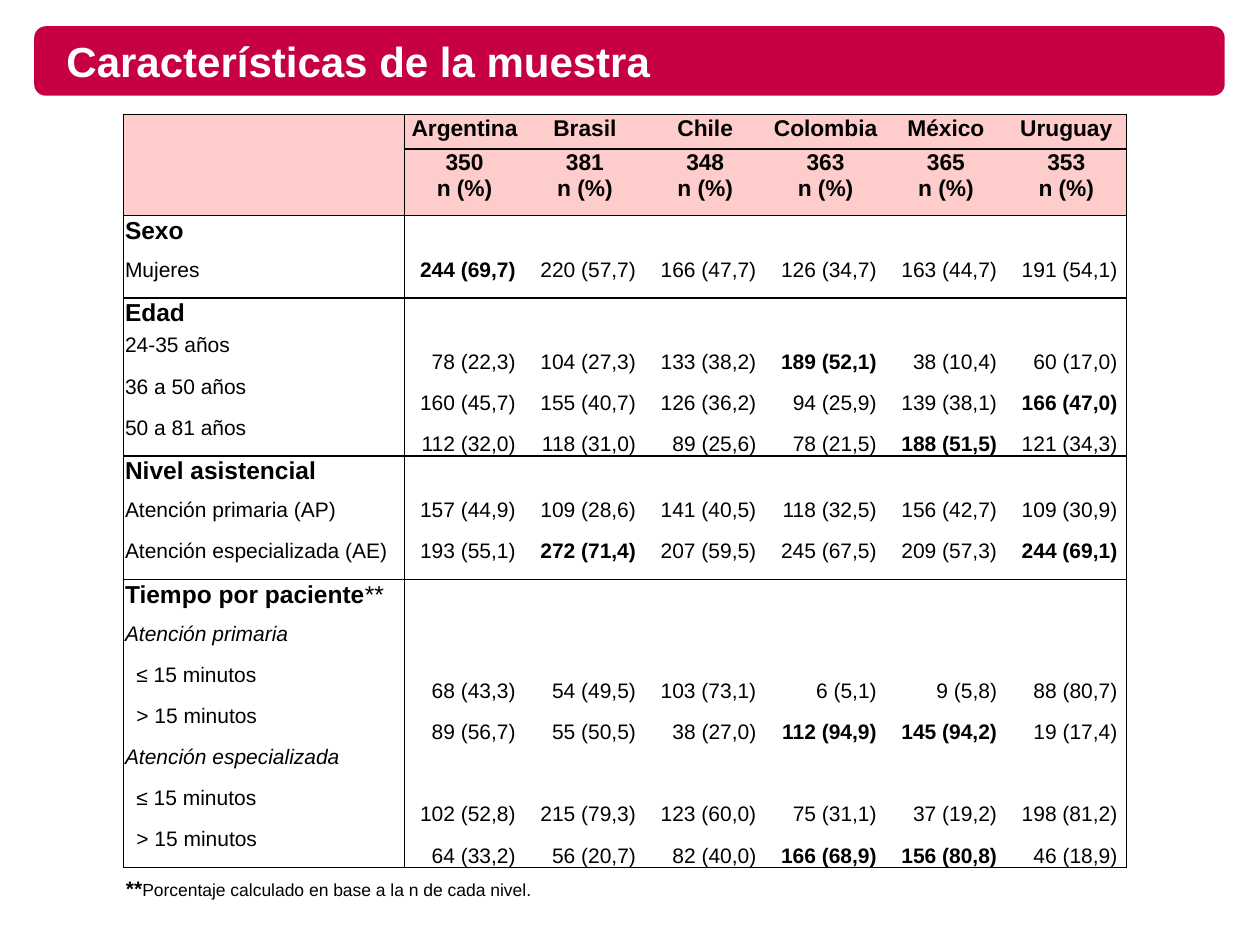
from dataclasses import dataclass

from lxml import etree
from pptx import Presentation
from pptx.dml.color import RGBColor
from pptx.enum.shapes import MSO_SHAPE
from pptx.enum.text import MSO_ANCHOR, PP_ALIGN
from pptx.oxml.ns import qn
from pptx.util import Cm, Pt

ROUNDED = MSO_SHAPE.ROUNDED_RECTANGLE
TOP, MIDDLE, BOTTOM = MSO_ANCHOR.TOP, MSO_ANCHOR.MIDDLE, MSO_ANCHOR.BOTTOM
LEFT, CENTER, RIGHT = PP_ALIGN.LEFT, PP_ALIGN.CENTER, PP_ALIGN.RIGHT


@dataclass(frozen=True)
class Theme:
    font: str = "Arial"
    banner: RGBColor = RGBColor(0xC7, 0x00, 0x44)
    header: RGBColor = RGBColor(0xFF, 0xCC, 0xCC)
    white: RGBColor = RGBColor(0xFF, 0xFF, 0xFF)
    black: RGBColor = RGBColor(0, 0, 0)
    title: int = 24
    section: int = 14
    country: int = 13
    body: int = 12
    note: int = 10
    border: int = 1


THEME = Theme()
COUNTRIES = {"Argentina": 350, "Brasil": 381, "Chile": 348,
             "Colombia": 363, "México": 365, "Uruguay": 353}
INDENTED = ("≤ 15 minutos", "> 15 minutos")

# Section: title, anchor of its values, rows of (label, values, bold countries)
SECTIONS = [
    ("Sexo", TOP, [
        ("Mujeres", "244 (69,7)|220 (57,7)|166 (47,7)|126 (34,7)|163 (44,7)|191 (54,1)",
         ["Argentina"]),
    ]),
    ("Edad", BOTTOM, [
        ("24-35 años", "78 (22,3)|104 (27,3)|133 (38,2)|189 (52,1)|38 (10,4)|60 (17,0)",
         ["Colombia"]),
        ("36 a 50 años", "160 (45,7)|155 (40,7)|126 (36,2)|94 (25,9)|139 (38,1)|166 (47,0)",
         ["Uruguay"]),
        ("50 a 81 años", "112 (32,0)|118 (31,0)|89 (25,6)|78 (21,5)|188 (51,5)|121 (34,3)",
         ["México"]),
    ]),
    ("Nivel asistencial", TOP, [
        ("Atención primaria (AP)",
         "157 (44,9)|109 (28,6)|141 (40,5)|118 (32,5)|156 (42,7)|109 (30,9)", []),
        ("Atención especializada (AE)",
         "193 (55,1)|272 (71,4)|207 (59,5)|245 (67,5)|209 (57,3)|244 (69,1)",
         ["Brasil", "Uruguay"]),
    ]),
    ("Tiempo por paciente", BOTTOM, [
        ("Atención primaria", "", []),
        ("≤ 15 minutos", "68 (43,3)|54 (49,5)|103 (73,1)|6 (5,1)|9 (5,8)|88 (80,7)", []),
        ("> 15 minutos", "89 (56,7)|55 (50,5)|38 (27,0)|112 (94,9)|145 (94,2)|19 (17,4)",
         ["Colombia", "México"]),
        ("Atención especializada", "", []),
        ("≤ 15 minutos", "102 (52,8)|215 (79,3)|123 (60,0)|75 (31,1)|37 (19,2)|198 (81,2)", []),
        ("> 15 minutos", "64 (33,2)|56 (20,7)|82 (40,0)|166 (68,9)|156 (80,8)|46 (18,9)",
         ["Colombia", "México"]),
    ]),
]


def style_run(run, size, color=THEME.black, bold=False, italic=False):
    font = run.font
    font.name, font.size, font.bold, font.italic = THEME.font, Pt(size), bold, italic
    font.color.rgb = color


def add_run(paragraph, text, size, **style):
    run = paragraph.add_run()
    run.text = text
    style_run(run, size, **style)


def set_margins(target, left, top, right, bottom):
    target.margin_left, target.margin_top = Cm(left), Cm(top)
    target.margin_right, target.margin_bottom = Cm(right), Cm(bottom)


def fill_cell(cell, text, size, align, margins, anchor=TOP, spacing=None, **style):
    cell.text_frame.text = text
    cell.vertical_anchor = anchor
    set_margins(cell, *margins)
    for paragraph in cell.text_frame.paragraphs:
        paragraph.alignment = align
        if spacing:
            paragraph.line_spacing = spacing
        for run in paragraph.runs:
            style_run(run, size, **style)


def clear_cell(cell):
    """Keep an empty cell from stretching its row."""
    set_margins(cell, 0, 0, 0, 0)
    end = cell.text_frame.paragraphs[0]._p.get_or_add_endParaRPr()
    end.set("sz", str(THEME.body * 100))


def set_borders(cell, sides):
    """Draw the sides named in a string of L, R, T and B, and blank the others."""
    properties = cell._tc.get_or_add_tcPr()
    for side in "LRTB":
        line = etree.SubElement(properties, qn(f"a:ln{side}"), w=str(Pt(THEME.border)))
        if side in sides:
            solid = etree.SubElement(line, qn("a:solidFill"))
            etree.SubElement(solid, qn("a:srgbClr"), val=str(THEME.black))
        else:
            etree.SubElement(line, qn("a:noFill"))


def add_text_box(slide, left, top, width, height):
    frame = slide.shapes.add_textbox(Cm(left), Cm(top), Cm(width), Cm(height)).text_frame
    frame.word_wrap = True
    return frame


def add_banner(slide, left, top, width, height):
    banner = slide.shapes.add_shape(ROUNDED, Cm(left), Cm(top), Cm(width), Cm(height))
    banner.shadow.inherit = False
    banner.fill.solid()
    banner.fill.fore_color.rgb = THEME.banner
    banner.line.fill.background()

    title = add_text_box(slide, left + 0.4, top + 0.1, width - 1.2, height - 0.2)
    title.vertical_anchor = MIDDLE
    add_run(title.paragraphs[0], "Características de la muestra", THEME.title,
            color=THEME.white, bold=True)


def fill_header(table):
    table.cell(0, 0).merge(table.cell(1, 0))
    clear_cell(table.cell(0, 0))
    for column, (country, sample) in enumerate(COUNTRIES.items(), 1):
        for row, text in enumerate((country, f"{sample}\nn (%)")):
            fill_cell(table.cell(row, column), text, THEME.country, CENTER,
                      (0.03, 0.03, 0.03, 0), bold=True)


def fill_section(table, first_row, title, anchor, rows):
    label_margins = (0.03, 0.03, 0.23, 0)
    heading = table.cell(first_row, 0)
    fill_cell(heading, title, THEME.section, LEFT, label_margins, bold=True)
    if title == "Tiempo por paciente":
        add_run(heading.text_frame.paragraphs[0], "**", THEME.section)
    for column in range(1, len(COUNTRIES) + 1):
        clear_cell(table.cell(first_row, column))

    for row, (label, values, bold_countries) in enumerate(rows, first_row + 1):
        margins = (0.26, *label_margins[1:]) if label in INDENTED else label_margins
        fill_cell(table.cell(row, 0), label, THEME.body, LEFT, margins, italic=not values)
        texts = values.split("|") if values else [""] * len(COUNTRIES)
        for column, (country, text) in enumerate(zip(COUNTRIES, texts), 1):
            cell = table.cell(row, column)
            if text:
                fill_cell(cell, text, THEME.body, RIGHT, (0.18, 0, 0.18, 0), anchor,
                          spacing=1.07, bold=country in bold_countries)
            else:
                clear_cell(cell)


def add_sample_table(slide, left, top, width, label_width):
    heights = [0.69, 1.35]
    for title, _, rows in SECTIONS:
        heights += [0.69 if title == "Edad" else 0.83] + [0.83] * len(rows)
    columns = len(COUNTRIES) + 1
    table = slide.shapes.add_table(len(heights), columns, Cm(left), Cm(top),
                                   Cm(width), Cm(sum(heights))).table
    table.first_row = table.horz_banding = False
    for row, height in zip(table.rows, heights):
        row.height = Cm(height)
    for index, column in enumerate(table.columns):
        column.width = Cm((width - label_width) / (columns - 1) if index else label_width)

    fill_header(table)
    rules = {0, 1, 2}
    first_row = 2
    for title, anchor, rows in SECTIONS:
        fill_section(table, first_row, title, anchor, rows)
        first_row += len(rows) + 1
        rules.add(first_row)

    for r in range(len(heights)):
        for c in range(columns):
            cell = table.cell(r, c)
            inside_merge = c == 0
            top_rule = r in rules and not (inside_merge and r == 1)
            bottom_rule = r + 1 in rules and not (inside_merge and r == 0)
            if cell.is_merge_origin:
                bottom_rule = True
            set_borders(cell, ("L" if c < 2 else "") + ("R" if c in (0, columns - 1) else "")
                        + ("T" if top_rule else "") + ("B" if bottom_rule else ""))
            if r < 2:
                cell.fill.solid()
                cell.fill.fore_color.rgb = THEME.header
            else:
                cell.fill.background()


def add_footnote(slide, left, top, width, height):
    note = add_text_box(slide, left, top, width, height).paragraphs[0]
    add_run(note, "**", THEME.body, bold=True)
    add_run(note, "Porcentaje calculado en base a la n de cada nivel.", THEME.note)


def main():
    deck = Presentation()
    deck.slide_width, deck.slide_height = Cm(25.4), Cm(19.05)
    slide = deck.slides.add_slide(deck.slide_layouts[6])
    add_banner(slide, 0.69, 0.53, 24.0, 1.4)
    add_sample_table(slide, 2.49, 2.31, 20.22, 5.66)
    add_footnote(slide, 2.29, 17.53, 21.23, 0.76)
    deck.save("out.pptx")


if __name__ == "__main__":
    main()
